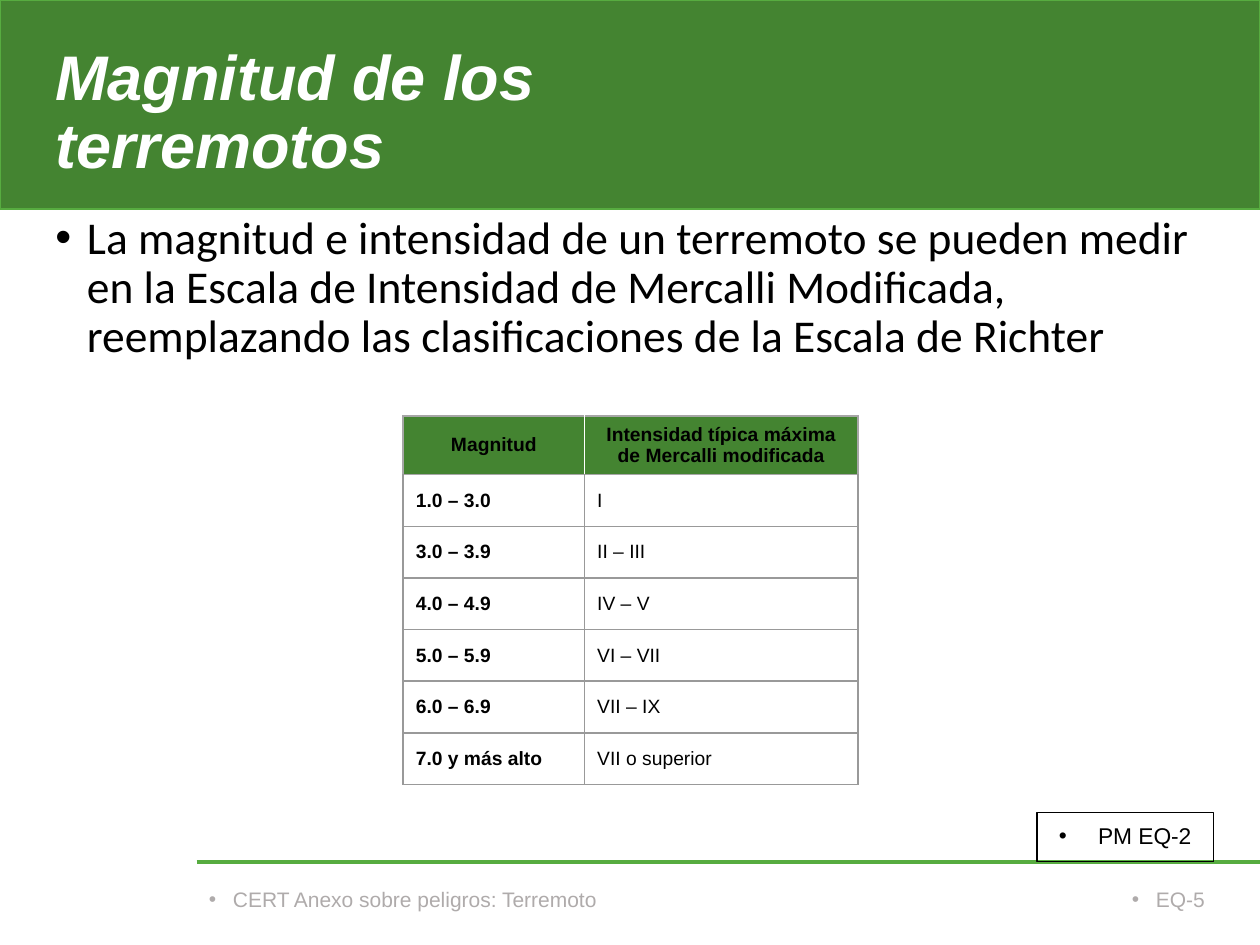
from lxml import etree
from pptx import Presentation, util as u
from pptx.dml.color import RGBColor
from pptx.enum import shapes, text
from pptx.oxml import ns

COLORS = {"band": "448431", "accent": "57AC40", "white": "FFFFFF", "black": "000000",
          "footer": "AFABAB", "grid": "999999", "header_grid": "A6A6A6"}
MIDDLE = text.MSO_ANCHOR.MIDDLE
LEFT, CENTER, RIGHT = text.PP_ALIGN.LEFT, text.PP_ALIGN.CENTER, text.PP_ALIGN.RIGHT

ROWS = [
    ("Magnitud", "Intensidad típica máxima de Mercalli modificada"),
    ("1.0 – 3.0", "I"),
    ("3.0 – 3.9", "II – III"),
    ("4.0 – 4.9", "IV – V"),
    ("5.0 – 5.9", "VI – VII"),
    ("6.0 – 6.9", "VII – IX"),
    ("7.0 y más alto", "VII o superior"),
]


def color(name):
    return RGBColor.from_string(COLORS[name])


def apply(target, values):
    for name, value in values.items():
        setattr(target, name, value)


class SlideBuilder:
    def __init__(self, page, font="Arial"):
        self.page = page
        self.font = font

    def place(self, shape, left, top, width, height):
        apply(shape, {"left": u.Inches(left), "top": u.Inches(top),
                      "width": u.Inches(width), "height": u.Inches(height)})

    def fill_text(self, frame, words, size, ink="black", align=LEFT, indent=0, spacing=0.9,
                  **font):
        frame.text = words
        para = frame.paragraphs[0]
        apply(para, {"alignment": align, "line_spacing": spacing, "space_before": u.Pt(0)})
        if indent:
            props = para._p.get_or_add_pPr()
            props.set("marL", str(u.Inches(indent)))
            props.set("indent", str(-u.Inches(indent)))
            etree.SubElement(props, ns.qn("a:buFont")).set("typeface", "Arial")
            etree.SubElement(props, ns.qn("a:buChar")).set("char", "•")
        span = para.runs[0]
        apply(span.font, {"name": self.font, "size": u.Pt(size), **font})
        span.font.color.rgb = color(ink)

    def band(self, left, top, width, height):
        box = self.page.shapes.add_shape(shapes.MSO_SHAPE.RECTANGLE, 0, 0, 0, 0)
        self.place(box, left, top, width, height)
        box.shadow.inherit = False
        box.fill.solid()
        box.fill.fore_color.rgb = color("band")
        box.line.color.rgb = color("accent")
        box.line.width = u.Pt(1)
        box.element.getparent().insert(2, box.element)

    def rule(self, left, right, top, width):
        line = self.page.shapes.add_connector(
            shapes.MSO_CONNECTOR.STRAIGHT,
            u.Inches(left), u.Inches(top), u.Inches(right), u.Inches(top))
        line.line.color.rgb = color("accent")
        line.line.width = u.Pt(width)
        etree.SubElement(line.element.spPr, ns.qn("a:effectLst"))

    def placeholder(self, index, area, words, size, anchor, **style):
        box = self.page.placeholders[index]
        self.place(box, *area)
        apply(box.text_frame, {"auto_size": text.MSO_AUTO_SIZE.NONE, "word_wrap": True,
                               "vertical_anchor": anchor})
        self.fill_text(box.text_frame, words, size, **style)

    def label(self, area, words, size, outline=None, **style):
        box = self.page.shapes.add_textbox(0, 0, 0, 0)
        self.place(box, *area)
        apply(box.text_frame, {"word_wrap": True, "vertical_anchor": MIDDLE})
        self.fill_text(box.text_frame, words, size, **style)
        if outline:
            box.line.color.rgb = color(outline)
            box.line.width = u.Pt(0.75)

    def borders(self, cell, sides):
        props = cell._tc.get_or_add_tcPr()
        for position, side in enumerate("LRTB"):
            line = etree.Element(ns.qn(f"a:ln{side}"), w=str(u.Pt(1)))
            fill = etree.SubElement(line, ns.qn("a:solidFill"))
            etree.SubElement(fill, ns.qn("a:srgbClr")).set("val", COLORS[sides[side]])
            props.insert(position, line)

    def table(self, left, top, widths, row_height, rows):
        grid = self.page.shapes.add_table(
            len(rows), len(widths), u.Inches(left), u.Inches(top),
            u.Inches(sum(widths)), u.Inches(row_height * len(rows))).table
        apply(grid, {"first_row": False, "horz_banding": False})
        for column, width in zip(grid.columns, widths):
            column.width = u.Inches(width)
        for r, values in enumerate(rows):
            grid.rows[r].height = u.Inches(row_height)
            header = r == 0
            for c, words in enumerate(values):
                cell = grid.cell(r, c)
                cell.vertical_anchor = MIDDLE
                self.fill_text(cell.text_frame, words, 11, spacing=1.0,
                               align=CENTER if header else LEFT, bold=header or c == 0)
                cell.fill.solid()
                cell.fill.fore_color.rgb = color("band" if header else "white")
                sides = dict.fromkeys("LRTB", "header_grid" if header else "grid")
                if header:
                    sides["R" if c == 0 else "L"] = "white"
                elif r == 1:
                    sides["T"] = "header_grid"
                self.borders(cell, sides)


def main():
    deck = Presentation()
    apply(deck, {"slide_width": u.Inches(10), "slide_height": u.Inches(7.5)})
    slide = SlideBuilder(deck.slides.add_slide(deck.slide_layouts[1]))
    slide.band(0, 0, 10, 1.66)
    slide.rule(1.56, 10, 6.84, 2.04)
    slide.placeholder(0, (0.34, 0.35, 6.35, 1.11), "Magnitud de los terremotos", 36, MIDDLE,
                      ink="white", bold=True, italic=True)
    slide.placeholder(1, (0.34, 1.66, 9.31, 1.33),
                      "La magnitud e intensidad de un terremoto se pueden medir en la Escala de "
                      "Intensidad de Mercalli Modificada, reemplazando las clasificaciones de la "
                      "Escala de Richter", 26, text.MSO_ANCHOR.TOP, indent=0.25, name="Calibri")
    slide.label((1.56, 6.98, 4.85, 0.33), "CERT Anexo sobre peligros: Terremoto", 12,
                ink="footer", indent=0.19)
    slide.label((7.69, 6.98, 1.97, 0.33), "EQ-5", 12, ink="footer", align=RIGHT, indent=0.19)
    slide.label((8.23, 6.45, 1.4, 0.39), "PM EQ-2", 13, outline="black", align=CENTER, indent=0.31)
    slide.table(3.2, 3.3, (1.44, 2.17), 0.41, ROWS)
    deck.save("out.pptx")


if __name__ == "__main__":
    main()
